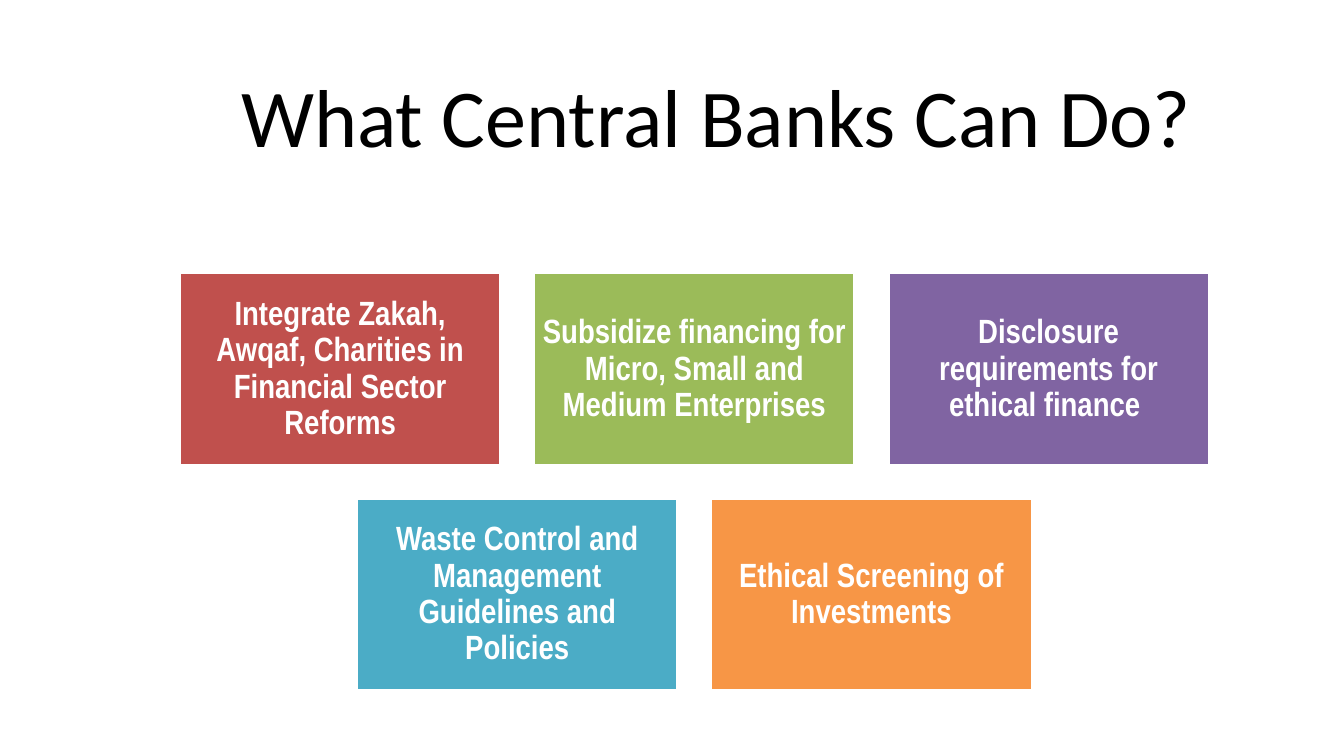
import pptx
import pptx.dml.color
import pptx.enum.shapes
import pptx.enum.text
import pptx.util

Pt = pptx.util.Pt
COLORS = {
    "black": "000000",
    "white": "FFFFFF",
    "red": "C0504D",
    "green": "9BBB59",
    "purple": "8064A2",
    "blue": "4BACC6",
    "orange": "F79646",
}
ACTION_ROWS = [
    [
        ("Integrate Zakah, Awqaf, Charities in Financial Sector Reforms", "red"),
        ("Subsidize financing for Micro, Small and Medium Enterprises", "green"),
        ("Disclosure requirements for ethical finance ", "purple"),
    ],
    [
        ("Waste Control and Management Guidelines and Policies", "blue"),
        ("Ethical Screening of Investments", "orange"),
    ],
]
CENTER, TOP = 372, 146
BOX_WIDTH, BOX_HEIGHT, GAP = 172.5, 103.5, 17.25


class SlideBuilder:
    """Holds the style and the current slide, and adds elements to it."""

    def __init__(self, presentation):
        self.slide = presentation.slides.add_slide(presentation.slide_layouts[5])

    def color(self, name):
        return pptx.dml.color.RGBColor.from_string(COLORS[name])

    def set_text(self, shape, text, font_name, size, color, bold=False):
        paragraph = shape.text_frame.paragraphs[0]
        paragraph.text = text
        paragraph.alignment = pptx.enum.text.PP_ALIGN.CENTER
        paragraph.font.name = font_name
        paragraph.font.size = Pt(size)
        paragraph.font.bold = bold
        paragraph.font.color.rgb = self.color(color)
        return paragraph

    def title(self, text, left, top, width, height):
        shape = self.slide.shapes.title
        shape.left, shape.top = Pt(left), Pt(top)
        shape.width, shape.height = Pt(width), Pt(height)
        frame = shape.text_frame
        frame.word_wrap = True
        frame.auto_size = pptx.enum.text.MSO_AUTO_SIZE.SHAPE_TO_FIT_TEXT
        frame.vertical_anchor = pptx.enum.text.MSO_ANCHOR.TOP
        self.set_text(shape, text, "Calibri", 44, "black")

    def box(self, text, fill, left, top):
        shape = self.slide.shapes.add_shape(
            pptx.enum.shapes.MSO_SHAPE.RECTANGLE,
            Pt(left), Pt(top), Pt(BOX_WIDTH), Pt(BOX_HEIGHT),
        )
        shape.shadow.inherit = False
        shape.fill.solid()
        shape.fill.fore_color.rgb = self.color(fill)
        shape.line.color.rgb = self.color("white")
        shape.line.width = Pt(2)
        frame = shape.text_frame
        frame.word_wrap = True
        frame.vertical_anchor = pptx.enum.text.MSO_ANCHOR.MIDDLE
        frame.margin_left = frame.margin_right = Pt(5)
        frame.margin_top = frame.margin_bottom = Pt(5)
        paragraph = self.set_text(shape, text, "Arial Narrow", 18, "white", bold=True)
        paragraph.line_spacing = 0.9

    def centered_row(self, actions, top):
        step = BOX_WIDTH + GAP
        left = CENTER - (len(actions) * step - GAP) / 2
        for column, (text, fill) in enumerate(actions):
            self.box(text, fill, left + column * step, top)


def main():
    presentation = pptx.Presentation()
    presentation.slide_width, presentation.slide_height = Pt(720), Pt(405)
    builder = SlideBuilder(presentation)
    builder.title("What Central Banks Can Do?", 102, 31.5, 564, 60.5)
    for row, actions in enumerate(ACTION_ROWS):
        builder.centered_row(actions, TOP + row * (BOX_HEIGHT + GAP))
    presentation.save("out.pptx")


if __name__ == "__main__":
    main()
